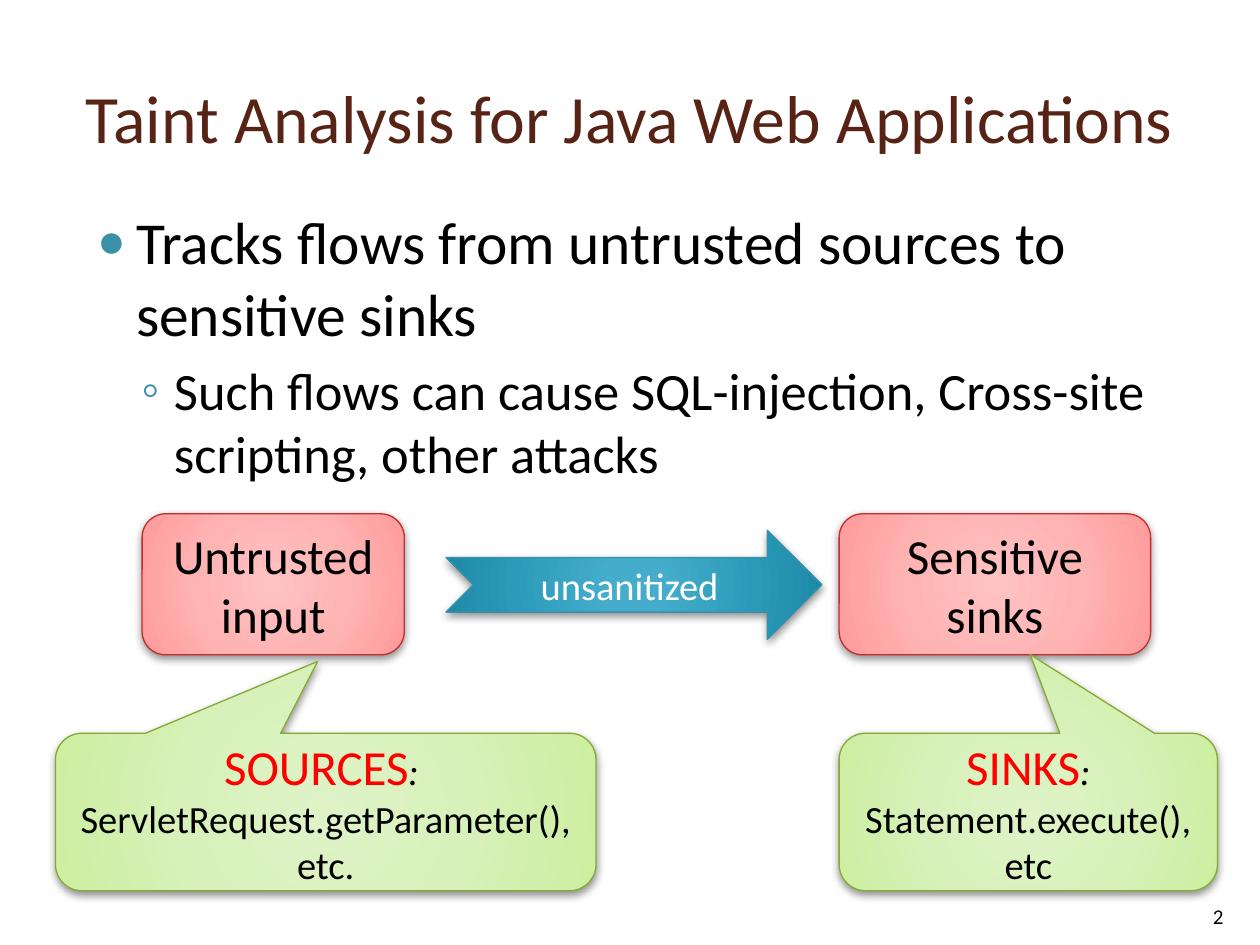
from dataclasses import dataclass

from lxml import etree
from pptx import Presentation
from pptx.dml.color import RGBColor
from pptx.enum import shapes, text
from pptx.oxml import ns
from pptx.util import Pt

FONT = "Calibri"
BLACK = RGBColor(0x00, 0x00, 0x00)
WHITE = RGBColor(0xFF, 0xFF, 0xFF)
RED = RGBColor(0xFF, 0x00, 0x00)
BROWN = RGBColor(0x57, 0x23, 0x14)
TEAL = RGBColor(0x38, 0x91, 0xA7)
CRIMSON = RGBColor(0xC3, 0x2D, 0x2E)
GREEN = RGBColor(0x84, 0xAA, 0x33)

PINK_STOPS = (
    (0, RGBColor(0xFF, 0xC2, 0xC2)), (50, RGBColor(0xFF, 0xB4, 0xB4)),
    (97, RGBColor(0xFF, 0x9C, 0x9C)), (100, RGBColor(0xFF, 0x95, 0x95)),
)
TEAL_STOPS = (
    (0, RGBColor(0x45, 0xAC, 0xCC)), (15, RGBColor(0x45, 0xAC, 0xCB)),
    (62, RGBColor(0x2B, 0x9A, 0xB9)), (97, RGBColor(0x1C, 0x8A, 0xA7)),
    (100, RGBColor(0x0E, 0x89, 0xA7)),
)
LIME_STOPS = (
    (0, RGBColor(0xDF, 0xF3, 0xC7)), (50, RGBColor(0xD8, 0xF1, 0xBA)),
    (97, RGBColor(0xCD, 0xEF, 0xA2)), (100, RGBColor(0xCA, 0xF1, 0x99)),
)


@dataclass(frozen=True)
class Box:
    left: float
    top: float
    width: float
    height: float

    def lengths(self) -> tuple:
        return Pt(self.left), Pt(self.top), Pt(self.width), Pt(self.height)


@dataclass(frozen=True)
class Style:
    preset: shapes.MSO_SHAPE
    stops: tuple
    line: RGBColor


@dataclass(frozen=True)
class Step:
    box: Box
    style: Style
    label: str
    size: float
    color: RGBColor


@dataclass(frozen=True)
class Callout:
    box: Box
    tip: tuple
    heading: str
    colon: str
    example: str


@dataclass(frozen=True)
class Bullet:
    label: str
    level: int
    size: float
    char: str
    scale: int
    margin: float
    hanging: float
    before: float


NODE = Style(shapes.MSO_SHAPE.ROUNDED_RECTANGLE, PINK_STOPS, CRIMSON)
ARROW = Style(shapes.MSO_SHAPE.NOTCHED_RIGHT_ARROW, TEAL_STOPS, TEAL)
CALLOUT = Style(shapes.MSO_SHAPE.ROUNDED_RECTANGULAR_CALLOUT, LIME_STOPS, GREEN)

TITLE_BOX = Box(41.8, 21.6, 638.6, 90)
BODY_BOX = Box(41.8, 113.8, 638.6, 378)
NUMBER_BOX = Box(678.2, 496.8, 36, 37.4)
SINK_LEFT = 479.5

BULLETS = (
    Bullet("Tracks flows from untrusted sources to sensitive sinks",
           0, 34, "●", 80, 28.8, 22.3, 6),
    Bullet("Such flows can cause SQL-injection, Cross-site scripting, other attacks",
           1, 30, "◦", 100, 50.4, 18.7, 5.5),
)
STEPS = (
    Step(Box(81.2, 293.6, 149.8, 80.6), NODE, "Untrusted input", 28, BLACK),
    Step(Box(SINK_LEFT, 293.6, 178, 80.6), NODE, "Sensitive sinks", 28, BLACK),
    Step(Box(254.9, 303, 214.8, 62.4), ARROW, "unsanitized ", 22, WHITE),
)
CALLOUTS = (
    Callout(Box(31.7, 419, 308.9, 90), (-0.015, -0.956), "SOURCES", ": ",
            "ServletRequest.getParameter(), etc."),
    Callout(Box(SINK_LEFT, 419, 216.2, 90), (0.005, -1), "SINKS", ":",
            "Statement.execute(), etc"),
)


def add_run(p, label: str, *, size: float, color: RGBColor = BLACK, italic: bool = False):
    r = p.add_run()
    r.text = label
    r.font.name = FONT
    r.font.size = Pt(size)
    r.font.color.rgb = color
    r.font.italic = italic
    return r


def add_element(parent, tag: str, **attributes):
    values = {name: str(value) for name, value in attributes.items()}
    return etree.SubElement(parent, ns.qn(tag), values)


def add_color(parent, color: RGBColor):
    return add_element(parent, "a:srgbClr", val=color)


def set_radial_fill(sp, stops: tuple) -> None:
    sp.fill.gradient()
    grad = sp._element.spPr.find(ns.qn("a:gradFill"))
    for child in list(grad):
        grad.remove(child)
    stop_list = add_element(grad, "a:gsLst")
    for percent, color in stops:
        add_color(add_element(stop_list, "a:gs", pos=percent * 1000), color)
    radial = add_element(grad, "a:path", path="circle")
    add_element(radial, "a:fillToRect", l=50000, t=50000, r=50000, b=50000)


def set_shadow(sp) -> None:
    sp.shadow.inherit = False
    effects = sp._element.spPr.find(ns.qn("a:effectLst"))
    shadow = add_element(effects, "a:outerShdw", blurRad=Pt(5), dist=Pt(2),
                         dir=90 * 60000, algn="ctr", rotWithShape=0)
    add_element(add_color(shadow, BLACK), "a:alpha", val=43000)


def add_styled_shape(s, box: Box, style: Style):
    sp = s.shapes.add_shape(style.preset, *box.lengths())
    set_radial_fill(sp, style.stops)
    sp.line.color.rgb = style.line
    sp.line.width = Pt(0.75)
    set_shadow(sp)
    sp.text_frame.word_wrap = True
    sp.text_frame.vertical_anchor = text.MSO_ANCHOR.MIDDLE
    sp.text_frame.paragraphs[0].alignment = text.PP_ALIGN.CENTER
    return sp


def add_step(s, step: Step) -> None:
    sp = add_styled_shape(s, step.box, step.style)
    add_run(sp.text_frame.paragraphs[0], step.label, size=step.size, color=step.color)


def add_callout(s, callout: Callout) -> None:
    sp = add_styled_shape(s, callout.box, CALLOUT)
    for i, value in enumerate((*callout.tip, 0.167)):
        sp.adjustments[i] = value
    tf = sp.text_frame
    add_run(tf.paragraphs[0], callout.heading, size=28, color=RED)
    add_run(tf.paragraphs[0], callout.colon, size=22, italic=True)
    p = tf.add_paragraph()
    p.alignment = text.PP_ALIGN.CENTER
    add_run(p, callout.example, size=22)


def place(sp, box: Box):
    sp.left, sp.top, sp.width, sp.height = box.lengths()
    sp.text_frame.auto_size = text.MSO_AUTO_SIZE.NONE
    sp.text_frame.word_wrap = True
    return sp.text_frame


def format_bullet(p, bullet: Bullet) -> None:
    p.level = bullet.level
    p.space_before = Pt(bullet.before)
    pPr = p._p.get_or_add_pPr()
    pPr.set("marL", str(Pt(bullet.margin)))
    pPr.set("indent", str(-Pt(bullet.hanging)))
    add_color(add_element(pPr, "a:buClr"), TEAL)
    add_element(pPr, "a:buSzPct", val=bullet.scale * 1000)
    add_element(pPr, "a:buChar", char=bullet.char)
    add_run(p, bullet.label, size=bullet.size)


def main() -> None:
    prs = Presentation()
    prs.slide_width, prs.slide_height = Pt(720), Pt(540)
    s = prs.slides.add_slide(prs.slide_layouts[1])

    tf = place(s.shapes.title, TITLE_BOX)
    tf.vertical_anchor = text.MSO_ANCHOR.MIDDLE
    tf.paragraphs[0].alignment = text.PP_ALIGN.LEFT
    add_run(tf.paragraphs[0], "Taint Analysis for Java Web Applications", size=38.7, color=BROWN)

    tf = place(s.placeholders[1], BODY_BOX)
    for i, bullet in enumerate(BULLETS):
        format_bullet(tf.add_paragraph() if i else tf.paragraphs[0], bullet)

    tf = place(s.shapes.add_textbox(*NUMBER_BOX.lengths()), NUMBER_BOX)
    tf.vertical_anchor = text.MSO_ANCHOR.BOTTOM
    tf.paragraphs[0].alignment = text.PP_ALIGN.CENTER
    add_run(tf.paragraphs[0], "2", size=12)

    for step in STEPS:
        add_step(s, step)
    for callout in CALLOUTS:
        add_callout(s, callout)
    prs.save("out.pptx")


if __name__ == "__main__":
    main()
